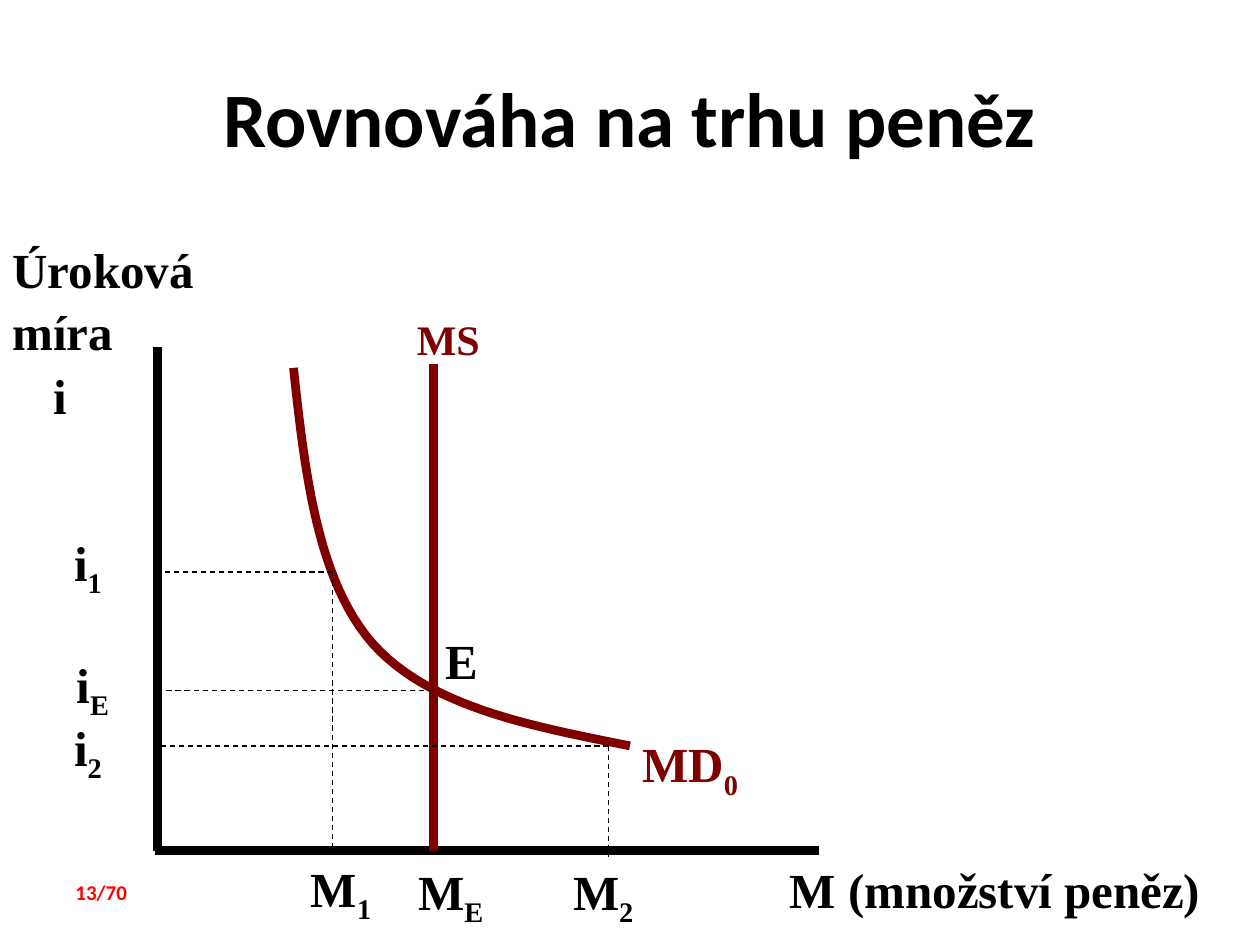
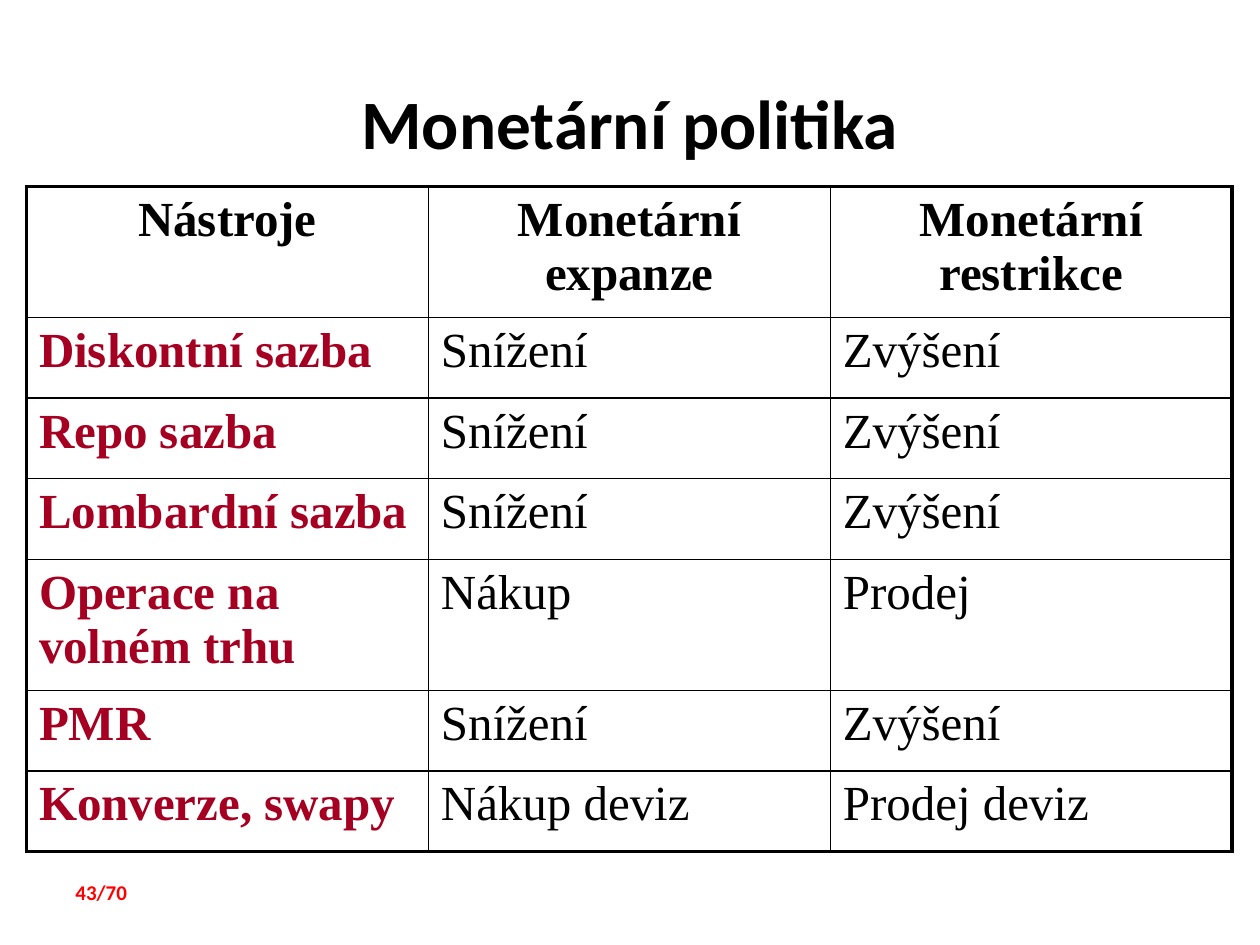
from lxml import etree
from pptx import Presentation
from pptx import util as u
from pptx.dml.color import RGBColor
from pptx.enum import dml, text
from pptx.oxml import ns

Inches, Pt = u.Inches, u.Pt
COLORS = {"ink": "000000", "curve": "800000", "tool": "A50021", "page": "FF0000"}
SERIF, SANS = "Times New Roman", "Calibri"
LABEL = {"name": SERIF, "size": 28, "bold": True, "color": "ink"}
CURVE_LABEL = {**LABEL, "color": "curve"}
TITLE = {"name": SANS, "size": 44, "bold": True, "color": "ink"}
FOOTER = {"name": SANS, "size": 12, "bold": True, "color": "page"}
LEFT, CENTER = text.PP_ALIGN.LEFT, text.PP_ALIGN.CENTER

AXIS_X, AXIS_Y = 1.25, 6.75
MS_X = 3.44

# text, subscript, left, top, width, height, format
LABELS = [
    ("Úroková míra", "", 0, 1.83, 2.25, 1.03, LABEL),
    ("M (množství peněz)", "", 6.17, 6.75, 3.58, 0.57, LABEL),
    ("MD", "0", 5, 5.75, 1.17, 0.57, CURVE_LABEL),
    ("i", "", 0.33, 2.83, 0.67, 0.57, LABEL),
    ("MS", "", 3.21, 2.42, 1.42, 0.5, {**CURVE_LABEL, "size": 24}),
    ("M", "E", 3.22, 6.76, 1.23, 0.57, LABEL),
    ("M", "2", 4.45, 6.76, 1.23, 0.57, LABEL),
    ("M", "1", 2.37, 6.74, 1.23, 0.57, LABEL),
    ("i", "1", 0.49, 4.15, 1.23, 0.57, LABEL),
    ("i", "E", 0.51, 5.12, 1.23, 0.57, LABEL),
    ("i", "2", 0.49, 5.62, 1.23, 0.57, LABEL),
    ("E", "", 3.44, 4.93, 1.23, 0.57, LABEL),
]
# start, end, colour, width
SOLID_LINES = [
    ((AXIS_X, 2.75), (AXIS_X, AXIS_Y), "ink", 5.5),
    ((1.23, AXIS_Y), (6.5, AXIS_Y), "ink", 5),
    ((MS_X, AXIS_Y), (MS_X, 2.89), "curve", 5),
]
GUIDES = [
    ((MS_X, 5.48), (1.3, 5.48)),
    ((2.64, 4.54), (1.23, 4.54)),
    ((4.83, 5.92), (1.23, 5.92)),
    ((2.64, 4.54), (2.64, AXIS_Y)),
    ((4.83, 5.92), (4.83, 6.8)),
]
DEMAND_BEZIERS = [
    ((2.33, 2.92), (2.42, 3.76), (2.52, 4.61), (2.96, 5.11)),
    ((2.96, 5.11), (3.41, 5.61), (4.2, 5.76), (5, 5.92)),
]
POLICY = [
    ("Nástroje", "Monetární expanze", "Monetární restrikce"),
    ("Diskontní sazba", "Snížení", "Zvýšení"),
    ("Repo sazba", "Snížení", "Zvýšení"),
    ("Lombardní sazba", "Snížení", "Zvýšení"),
    ("Operace na volném trhu", "Nákup", "Prodej"),
    ("PMR", "Snížení", "Zvýšení"),
    ("Konverze, swapy", "Nákup deviz", "Prodej deviz"),
]
TALL_ROWS = (0, 4)


def color(name):
    return RGBColor.from_string(COLORS[name])


def add_span(para, words, style, subscript=False):
    span = para.add_run()
    span.text = words
    values = {**style, "size": Pt(style["size"])}
    span.font.color.rgb = color(values.pop("color"))
    for key, value in values.items():
        setattr(span.font, key, value)
    if subscript:
        span.font._element.set("baseline", "-25000")


def add_text(page, words, left, top, width, height, style, sub="",
             align=LEFT, anchor=text.MSO_ANCHOR.TOP, spacing=1.0):
    box = page.shapes.add_textbox(*map(Inches, (left, top, width, height)))
    frame = box.text_frame
    frame.word_wrap = True
    frame.vertical_anchor = anchor
    para = frame.paragraphs[0]
    para.alignment = align
    para.line_spacing = spacing
    add_span(para, words, style)
    if sub:
        add_span(para, sub, style, subscript=True)


def add_line(page, start, end, shade, width, dash=None):
    line = page.shapes.add_connector(1, *map(Inches, (*start, *end)))
    line.line.color.rgb = color(shade)
    line.line.width = Pt(width)
    if dash:
        line.line.dash_style = dash
    etree.SubElement(line._element.spPr, ns.qn("a:effectLst"))


def bezier_points(corners, steps=24):
    """Points along a cubic curve, without its first one."""
    for step in range(1, steps + 1):
        t = step / steps
        weights = ((1 - t) ** 3, 3 * t * (1 - t) ** 2, 3 * t * t * (1 - t), t ** 3)
        yield tuple(Inches(sum(w * corner[axis] for w, corner in zip(weights, corners)))
                    for axis in (0, 1))


def add_demand_curve(page):
    builder = page.shapes.build_freeform(*map(Inches, DEMAND_BEZIERS[0][0]))
    for corners in DEMAND_BEZIERS:
        builder.add_line_segments(list(bezier_points(corners)), close=False)
    curve = builder.convert_to_shape()
    curve.shadow.inherit = False
    curve.fill.background()
    curve.line.color.rgb = color("curve")
    curve.line.width = Pt(5)


def set_borders(cell, widths):
    props = cell._tc.get_or_add_tcPr()
    for side, width in widths.items():
        edge = etree.SubElement(props, ns.qn(f"a:ln{side}"), w=str(Pt(width)))
        fill = etree.SubElement(edge, ns.qn("a:solidFill"))
        etree.SubElement(fill, ns.qn("a:srgbClr"), val=COLORS["ink"])


def add_policy_table(page):
    last_row, last_col = len(POLICY) - 1, len(POLICY[0]) - 1
    table = page.shapes.add_table(last_row + 1, last_col + 1, Inches(0.21), Inches(1.48),
                                  Inches(9.58), Inches(5.29)).table
    table.first_row = table.horz_banding = False
    for column in table.columns:
        column.width = Inches(3.19)
    for r, row in enumerate(POLICY):
        table.rows[r].height = Inches(1.04 if r in TALL_ROWS else 0.64)
        for c, words in enumerate(row):
            cell = table.cell(r, c)
            outer = {"L": c == 0, "R": c == last_col, "T": r == 0, "B": r == last_row}
            set_borders(cell, {side: 2.25 if edge else 1 for side, edge in outer.items()})
            cell.fill.background()
            para = cell.text_frame.paragraphs[0]
            para.alignment = CENTER if r == 0 else LEFT
            shade = "tool" if r and c == 0 else "ink"
            add_span(para, words, {**LABEL, "bold": r == 0 or c == 0, "color": shade})


def add_page(deck, title, top, height, size, number):
    page = deck.slides.add_slide(deck.slide_layouts[6])
    add_text(page, title, 0.5, top, 9, height, {**TITLE, "size": size},
             align=CENTER, anchor=text.MSO_ANCHOR.MIDDLE)
    add_text(page, f"{number}/70", 0.5, 6.93, 0.92, 0.3, FOOTER)
    return page


def main():
    deck = Presentation()
    deck.slide_width, deck.slide_height = Inches(10), Inches(7.5)

    market = add_page(deck, "Rovnováha na trhu peněz", 0.3, 1.25, 44, 13)
    add_demand_curve(market)
    for line in SOLID_LINES:
        add_line(market, *line)
    for start, end in GUIDES:
        add_line(market, start, end, "ink", 0.75, dml.MSO_LINE.DASH)
    for words, sub, left, top, width, height, style in LABELS:
        add_text(market, words, left, top, width, height, style, sub, spacing=1.05)

    policy = add_page(deck, "Monetární politika", 0.62, 0.69, 39.6, 43)
    add_policy_table(policy)
    deck.save("out.pptx")


if __name__ == "__main__":
    main()
